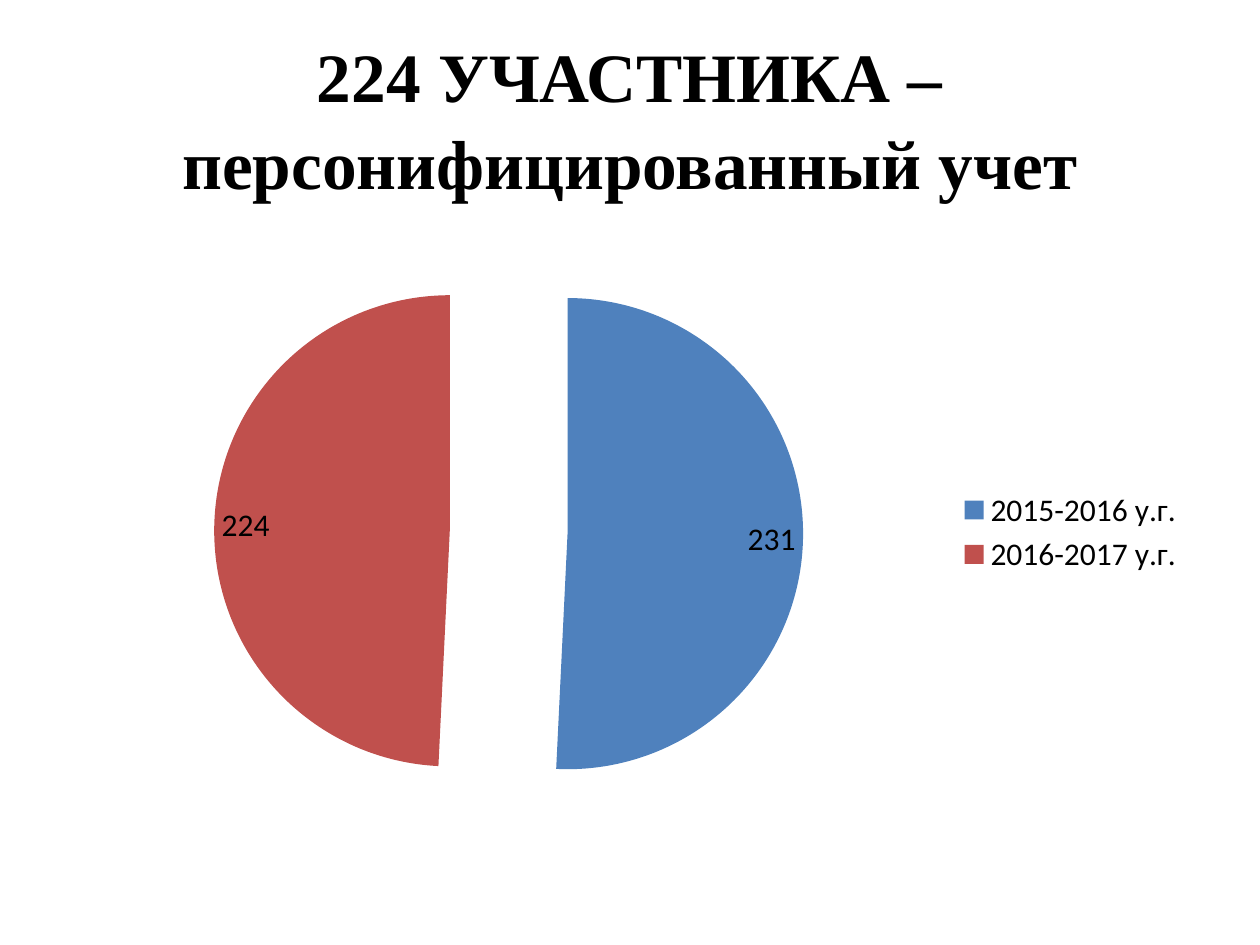
from lxml import etree
from pptx import Presentation
from pptx import util as u
from pptx.chart.data import CategoryChartData
from pptx.dml.color import RGBColor
from pptx.enum import chart as ch, text
from pptx.oxml.ns import qn

prs = Presentation()
prs.slide_width, prs.slide_height = u.Inches(10), u.Inches(7.5)
W, H = prs.slide_width, prs.slide_height
slide = prs.slides.add_slide(prs.slide_layouts[6])
MARGIN = int(W * 0.05)


def color(value):
    return RGBColor.from_string(value)


def write(content, top, height, size, font, fill="000000", bold=False, spacing=1.0):
    box = slide.shapes.add_textbox(MARGIN, int(top), W - 2 * MARGIN, int(height))
    frame = box.text_frame
    frame.word_wrap = True
    frame.vertical_anchor = text.MSO_ANCHOR.MIDDLE
    line = frame.paragraphs[0]
    line.alignment = text.PP_ALIGN.CENTER
    line.line_spacing = spacing
    run = line.add_run()
    run.text = content
    run.font.size, run.font.name, run.font.bold = u.Pt(size), font, bold
    run.font.color.rgb = color(fill)


# Heading
write("224 УЧАСТНИКА – персонифицированный учет", top=H * 0.04, height=H / 6,
      size=39.6, font="Times New Roman", bold=True, spacing=1.04)

# Participants per school year
years = [("2015-2016 у.г.", 231, "4F81BD"), ("2016-2017 у.г.", 224, "C0504D")]
participants = CategoryChartData()
participants.categories = [year for year, _, _ in years]
participants.add_series("Series 1", [count for _, count, _ in years])
pie = slide.shapes.add_chart(ch.XL_CHART_TYPE.PIE, MARGIN, int(H * 0.2333),
                             W - 2 * MARGIN, int(H * 0.66), participants).chart
pie.has_title = False
pie.font.size, pie.font.name = u.Pt(18), "Calibri"
pie.font.color.rgb = color("000000")
pie.has_legend = True
pie.legend.position = ch.XL_LEGEND_POSITION.RIGHT
pie.legend.include_in_layout = False

# Slices and their values
plot = pie.plots[0]
plot.vary_by_categories = True
plot.has_data_labels = True
plot.data_labels.show_value = True
plot.data_labels.show_percentage = False
plot.data_labels.position = ch.XL_LABEL_POSITION.INSIDE_END
slices = plot.series[0]
for i, (_, _, fill) in enumerate(years):
    slice_fill = slices.points[i].format.fill
    slice_fill.solid()
    slice_fill.fore_color.rgb = color(fill)

# Pull the slices apart
explosion = etree.Element(qn("c:explosion"), val="25")
slices._element.find(qn("c:dPt")).addprevious(explosion)

prs.save("out.pptx")
